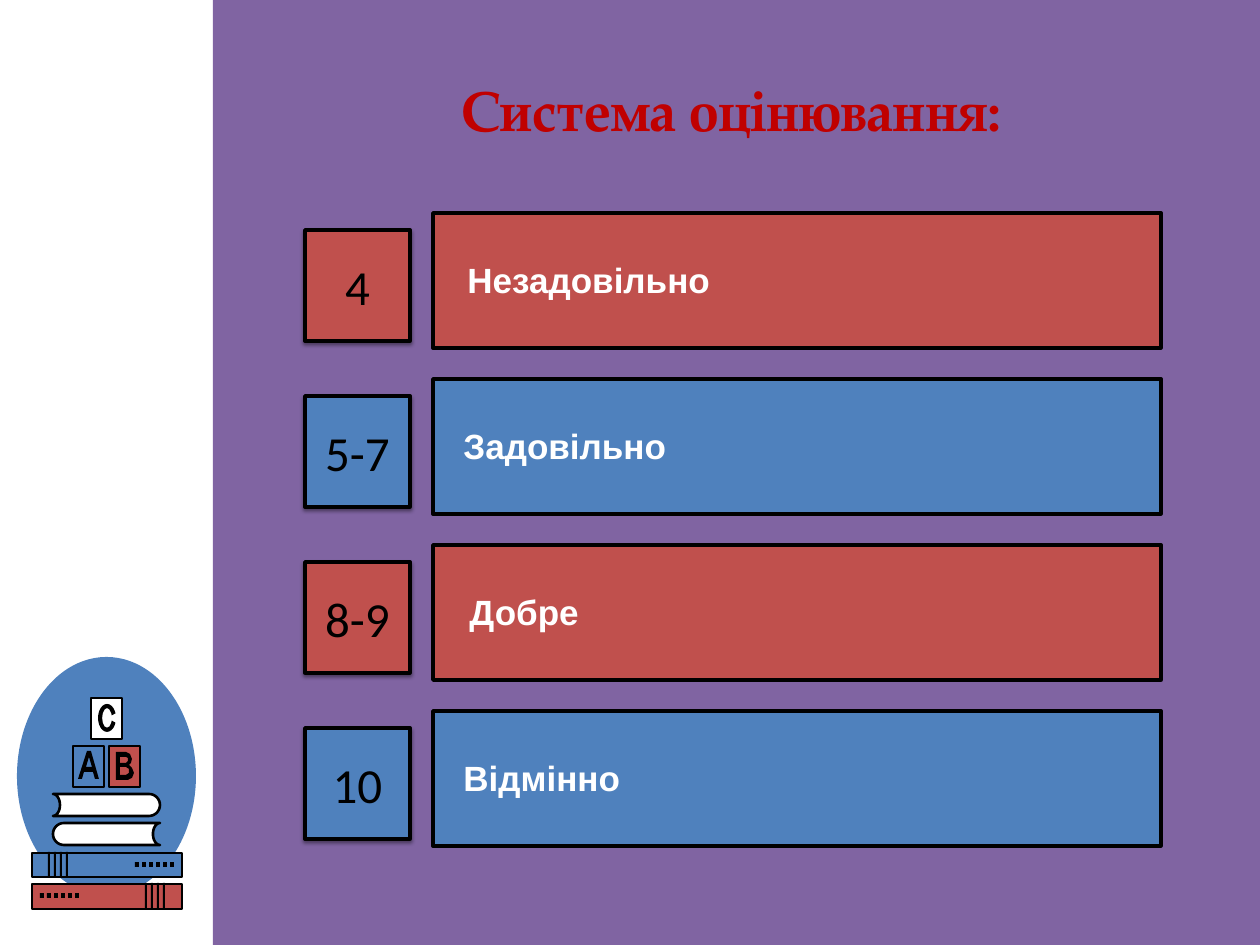
"""Build the grading scale slide with its emblem of books and letter blocks."""
from math import cos, pi, sin
from lxml import etree
from pptx import Presentation
from pptx.dml.color import RGBColor
from pptx.enum.shapes import MSO_SHAPE
from pptx.enum.text import MSO_ANCHOR, PP_ALIGN
from pptx.oxml import parse_xml
from pptx.util import Pt

RECT, OVAL, ARC = MSO_SHAPE.RECTANGLE, MSO_SHAPE.OVAL, MSO_SHAPE.BLOCK_ARC
MIDDLE, CENTER = MSO_ANCHOR.MIDDLE, PP_ALIGN.CENTER
PX = 914400 / 126
THEME = {
    "purple": RGBColor(0x80, 0x64, 0xA2), "blue": RGBColor(0x4F, 0x81, 0xBD),
    "red": RGBColor(0xC0, 0x50, 0x4D), "title": RGBColor(0xC0, 0x00, 0x00),
    "black": RGBColor(0, 0, 0), "white": RGBColor(255, 255, 255),
    "title_size": Pt(32), "score_size": Pt(28), "grade_size": Pt(20),
    "title_font": "TeX Gyre Pagella", "score_font": "Calibri", "grade_font": "Arial",
    "thin": Pt(1.5), "thick": Pt(2),
}
SHADOW = (
    '<a:outerShdw xmlns:a="http://schemas.openxmlformats.org/drawingml/2006/main" '
    'blurRad="25400" dist="19050" dir="5400000" rotWithShape="0">'
    '<a:srgbClr val="000000"><a:alpha val="40000"/></a:srgbClr></a:outerShdw>'
)

prs = Presentation()
prs.slide_width, prs.slide_height = round(1260 * PX), round(945 * PX)
slide = prs.slides.add_slide(prs.slide_layouts[6])
shapes = slide.shapes


def paint(part, fill, line=None):
    part.shadow.inherit = False
    part.fill.solid()
    part.fill.fore_color.rgb = THEME[fill]
    if line:
        part.line.color.rgb = THEME["black"]
        part.line.width = THEME[line]
    else:
        part.line.fill.background()
    return part


def write(part, text, role, color, bold):
    paragraph = part.text_frame.paragraphs[0]
    paragraph.text = text
    paragraph.font.name = THEME[role + "_font"]
    paragraph.font.size = THEME[role + "_size"]
    paragraph.font.color.rgb = THEME[color]
    paragraph.font.bold = bold
    return paragraph


emblem = [
    (RECT, (213, 0, 1047, 945), "purple", None),
    (OVAL, (17, 657, 179, 238), "blue", None),
    (RECT, (32, 853, 150, 24), "blue", "thin"),
    (RECT, (32, 884, 150, 25), "red", "thin"),
    (RECT, (73, 746, 31, 41), "blue", "thin"),
    (RECT, (109, 746, 31, 41), "red", "thin"),
    (RECT, (91, 698, 31, 41), "white", "thin"),
]
for spine_left, dots_left, top in [(48, 135, 852), (145, 40, 883)]:
    emblem += [(RECT, (spine_left + 6 * i, top, 2, 25), "black", None) for i in range(4)]
    emblem += [(RECT, (dots_left + 7 * i, top + 10, 4, 5), "black", None) for i in range(6)]
for preset, box, fill, line in emblem:
    paint(shapes.add_shape(preset, *(round(n * PX) for n in box)), fill, line)

letter_c = paint(shapes.add_shape(ARC, *(round(n * PX) for n in (98, 704, 18, 28))), "black")
for index, value in enumerate((17.57, 198.9, 0.23)):
    letter_c.adjustments[index] = value

letter_a = [
    [(87, 751), (91, 751), (99, 779), (95, 779), (93, 772), (84, 772), (82, 779), (78, 779)],
    [(89, 757), (86, 767), (92, 767)],
]
letter_b = [
    [(116, 752), (126, 752), (130, 754), (132, 759), (131, 763), (129, 765),
     (132, 768), (134, 773), (132, 778), (128, 780), (116, 780)],
    [(120, 767), (120, 775), (126, 775), (129, 773), (129, 769), (126, 767)],
    [(120, 757), (120, 763), (126, 763), (128, 761), (128, 758), (126, 757)],
]
angles = [pi * step / 16 - pi / 2 for step in range(17)]
book = [(96 + 11 * cos(a), 11 * sin(a)) for a in angles]
book += [(7 * cos(a), -11 * sin(a)) for a in angles]
upper_book = [[(53 + x, 805 + y) for x, y in book]]
lower_book = [[(160 - x, 834 + y) for x, y in book]]

for contours, fill, line in [
    (letter_a, "black", None), (letter_b, "black", None),
    (upper_book, "white", "thin"), (lower_book, "white", "thin"),
]:
    scaled = [[(x * PX, y * PX) for x, y in contour] for contour in contours]
    builder = shapes.build_freeform(*scaled[0][0])
    builder.add_line_segments(scaled[0][1:], close=True)
    for hole in scaled[1:]:
        builder.move_to(*hole[0])
        builder.add_line_segments(hole[1:], close=True)
    paint(builder.convert_to_shape(), fill, line)

title = shapes.add_textbox(*(round(n * PX) for n in (253, 38, 958, 142)))
title.text_frame.word_wrap = True
title.text_frame.vertical_anchor = MIDDLE
write(title, "Система оцінювання:", "title", "title", True).alignment = CENTER

grades = [
    ("4", "Незадовільно", "red", 455), ("5-7", "Задовільно", "blue", 451),
    ("8-9", "Добре", "red", 457), ("10", "Відмінно", "blue", 451),
]
for row, (score, grade, fill, grade_left) in enumerate(grades):
    top = 213 + 166 * row
    badge_box = (305, top + 17, 105, 111)
    badge = paint(shapes.add_shape(RECT, *(round(n * PX) for n in badge_box)), fill, "thick")
    effects = badge.element.spPr.find("{*}effectLst")
    effects.append(parse_xml(etree.tostring(etree.fromstring(SHADOW))))
    badge.text_frame.word_wrap = False
    badge.text_frame.vertical_anchor = MIDDLE
    write(badge, score, "score", "black", False).alignment = CENTER

    bar_box = (433, top, 728, 135)
    paint(shapes.add_shape(RECT, *(round(n * PX) for n in bar_box)), fill, "thick")
    label_box = (grade_left, top + 39, 655, 55)
    label = shapes.add_textbox(*(round(n * PX) for n in label_box))
    label.text_frame.word_wrap = True
    write(label, grade, "grade", "white", True)

prs.save("out.pptx")
